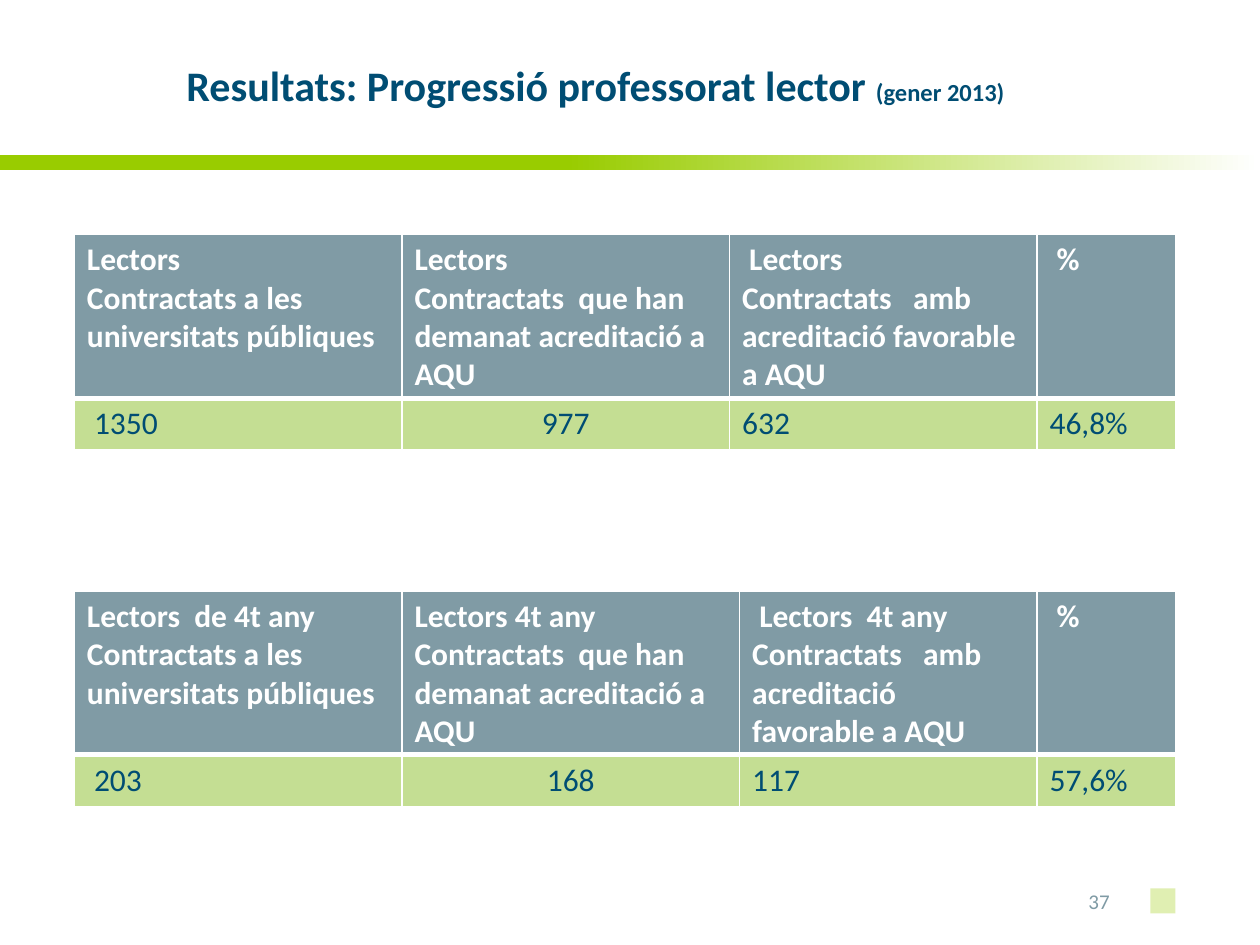
import pptx
import pptx.dml.color
import pptx.enum.shapes
import pptx.enum.text
import pptx.oxml
import pptx.oxml.ns
import pptx.util
from lxml import etree

Inches = pptx.util.Inches
Pt = pptx.util.Pt
ALIGN = pptx.enum.text.PP_ALIGN
MIDDLE = pptx.enum.text.MSO_ANCHOR.MIDDLE
qn = pptx.oxml.ns.qn


def rgb(code):
    return pptx.dml.color.RGBColor.from_string(code)


class Deck:
    FONT = "Calibri"
    NAVY, SLATE, GREEN, PALE, WHITE = "004D73", "809BA5", "99CC00", "C4DE93", "FFFFFF"

    def __init__(self, prs):
        self.s = prs.slides.add_slide(prs.slide_layouts[5])

    def run(self, p, text, size, color, bold=False):
        r = p.add_run()
        r.text = text
        r.font.name = self.FONT
        r.font.size = Pt(size)
        r.font.bold = bold
        r.font.color.rgb = rgb(color)

    def title(self, x, y, w, h, parts):
        sp = self.s.shapes.title
        sp.left, sp.top, sp.width, sp.height = map(Inches, (x, y, w, h))
        tf = sp.text_frame
        tf.vertical_anchor = MIDDLE
        p = tf.paragraphs[0]
        p.alignment = ALIGN.LEFT
        for text, size in parts:
            self.run(p, text, size, self.NAVY, True)

    def rect(self, x, y, w, h):
        sp = self.s.shapes.add_shape(pptx.enum.shapes.MSO_SHAPE.RECTANGLE,
                                     *map(Inches, (x, y, w, h)))
        sp.shadow.inherit = False
        sp.line.fill.background()
        return sp

    def fading_bar(self, x, y, w, h):
        fill = self.rect(x, y, w, h).fill
        fill.gradient()
        fill.gradient_angle = 0
        for stop, position, color in zip(fill.gradient_stops, (0.45, 1),
                                         (self.GREEN, self.WHITE)):
            stop.position = position
            stop.color.rgb = rgb(color)

    def translucent_square(self, x, y, size, opacity):
        sp = self.rect(x, y, size, size)
        sp.fill.solid()
        sp.fill.fore_color.rgb = rgb(self.GREEN)
        color = sp.fill._xPr.find(".//" + qn("a:srgbClr"))
        etree.SubElement(color, qn("a:alpha"), val=str(opacity * 1000))

    def text(self, x, y, w, h, text, size, color):
        tf = self.s.shapes.add_textbox(*map(Inches, (x, y, w, h))).text_frame
        tf.word_wrap = True
        tf.vertical_anchor = MIDDLE
        self.run(tf.paragraphs[0], text, size, color)

    def borders(self, cell, **widths):
        """Draw white cell borders; widths in points, in the order L, R, T, B."""
        tcPr = cell._tc.get_or_add_tcPr()
        for i, (side, width) in enumerate(widths.items()):
            ln = pptx.oxml.parse_xml(
                f'<a:ln{side} {pptx.oxml.ns.nsdecls("a")} w="{Pt(width)}"><a:solidFill>'
                f'<a:srgbClr val="{self.WHITE}"/></a:solidFill></a:ln{side}>')
            tcPr.insert(i, ln)

    def table(self, x, y, widths, heights, rows):
        """Add a table with a header row; each cell is a list of paragraphs."""
        tbl = self.s.shapes.add_table(len(rows), len(widths), Inches(x), Inches(y),
                                      Inches(sum(widths)), Inches(sum(heights))).table
        for col, width in zip(tbl.columns, widths):
            col.width = Inches(width)
        for i, (row, height) in enumerate(zip(rows, heights)):
            tbl.rows[i].height = Inches(height)
            head = i == 0
            for j, lines in enumerate(row):
                cell = tbl.cell(i, j)
                cell.fill.solid()
                cell.fill.fore_color.rgb = rgb(self.SLATE if head else self.PALE)
                self.borders(cell, L=1, R=1, T=1 if head else 3, B=3 if head else 1)
                tf = cell.text_frame
                for k, line in enumerate(lines):
                    p = tf.add_paragraph() if k else tf.paragraphs[0]
                    if not head and j == 1:
                        p.alignment = ALIGN.CENTER
                    self.run(p, line, 18, self.WHITE if head else self.NAVY, head)


def main():
    prs = pptx.Presentation()
    prs.slide_width, prs.slide_height = Inches(10), Inches(7.5)
    deck = Deck(prs)
    deck.fading_bar(0, 1.23, 10, 0.12)
    deck.translucent_square(9.13, 7.05, 0.2, 30)
    deck.text(8.54, 6.95, 0.55, 0.4, "37", 12, deck.SLATE)
    deck.title(1.38, 0.36, 8.5, 0.63,
               [("Resultats: Progressió professorat lector ", 24), ("(gener 2013)", 14)])

    groups = ["Contractats a les universitats públiques",
              "Contractats  que han demanat acreditació a AQU",
              "Contractats   amb acreditació favorable a AQU"]
    tables = [
        (1.86, [2.6, 2.6, 2.44, 1.1], ["Lectors", "Lectors", " Lectors"],
         [" 1350", "977", "632", "46,8%"]),
        (4.69, [2.6, 2.68, 2.36, 1.1],
         ["Lectors  de 4t any", "Lectors 4t any", " Lectors  4t any"],
         [" 203", "168", "117", "57,6%"]),
    ]
    for top, widths, names, values in tables:
        header = [list(pair) for pair in zip(names, groups)] + [[" %"]]
        deck.table(0.59, top, widths, [1.3, 0.41], [header, [[v] for v in values]])
    prs.save("out.pptx")


if __name__ == "__main__":
    main()
